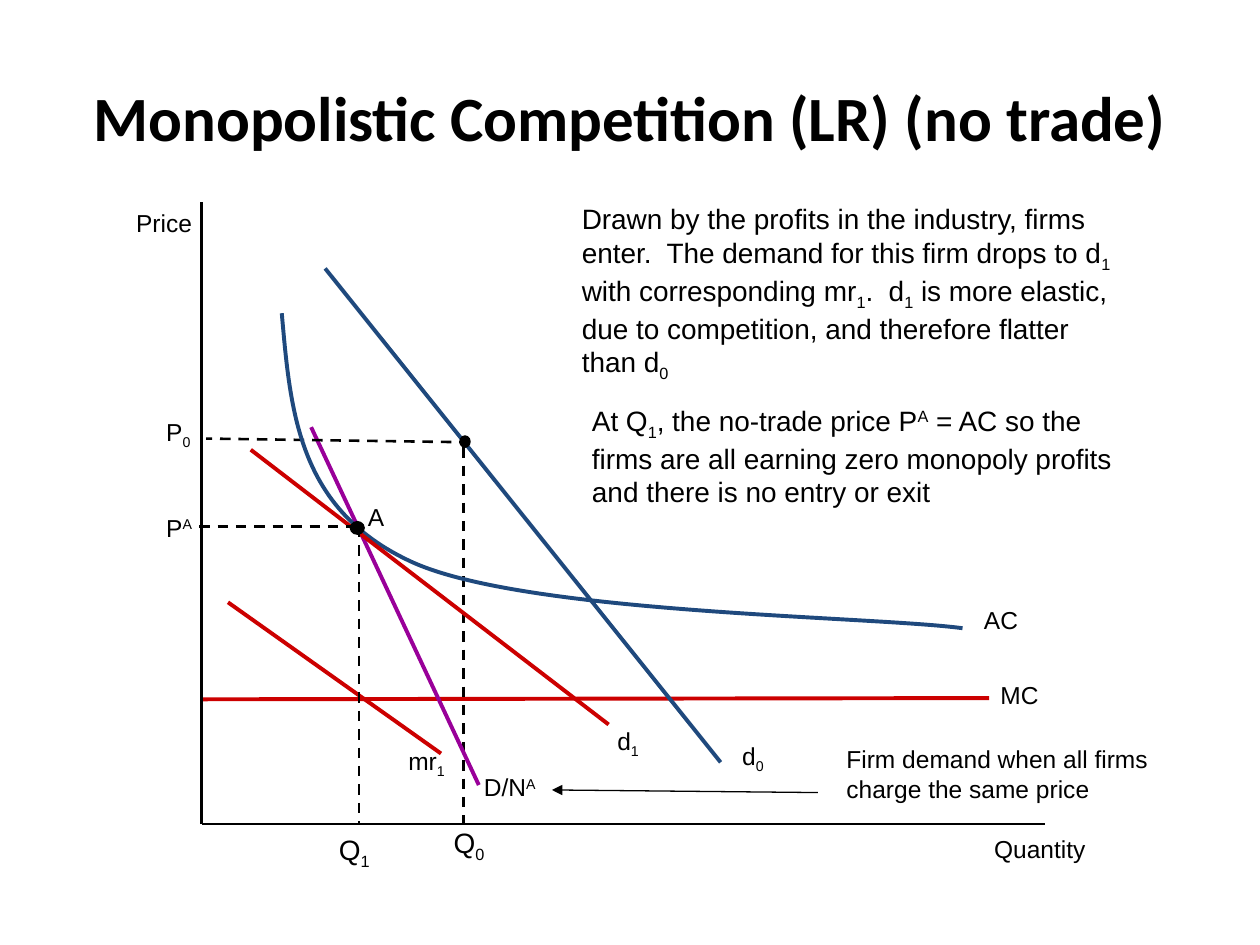
from pptx import Presentation
from pptx.dml.color import RGBColor
from pptx.enum.dml import MSO_LINE
from pptx.enum.shapes import MSO_CONNECTOR, MSO_SHAPE
from pptx.enum.text import MSO_ANCHOR, PP_ALIGN
from pptx.oxml.ns import qn
from pptx.util import Pt
from lxml.etree import SubElement

BLACK, WHITE = "000000", "FFFFFF"
RED, BLUE, PURPLE = "CC0000", "1F497D", "990099"
BASELINES = {"_": "-25000", "^": "30000"}
AXIS_X, AXIS_Y = 115.2, 470.9
Q0, Q1, PRICE_A = 265, 205.2, 301


def color(value):
    return RGBColor.from_string(value)


def write(box, text, size=14, font="Arial", bold=False, align=PP_ALIGN.LEFT,
          anchor=MSO_ANCHOR.TOP, inset=(0, 0)):
    frame = box.text_frame
    frame.word_wrap = True
    frame.vertical_anchor = anchor
    frame.margin_left = frame.margin_right = Pt(inset[0])
    frame.margin_top = frame.margin_bottom = Pt(inset[1])
    para = frame.paragraphs[0]
    para.alignment = align
    for part in text.split("|"):
        span = para.add_run()
        baseline = BASELINES.get(part[0])
        span.text = part[1:] if baseline else part
        span.font.size = Pt(size)
        span.font.name = font
        span.font.bold = bold
        span.font.color.rgb = color(BLACK)
        if baseline:
            span._r.get_or_add_rPr().set("baseline", baseline)


class Diagram:
    inset = (7.2, 3.6)

    def __init__(self, page):
        self.shapes = page.shapes

    def text(self, text, left, top, width, height, **style):
        box = self.shapes.add_textbox(Pt(left), Pt(top), Pt(width), Pt(height))
        write(box, text, **style)

    def shape(self, kind, left, top, width, height, fill, line):
        box = self.shapes.add_shape(kind, Pt(left), Pt(top), Pt(width), Pt(height))
        box.shadow.inherit = False
        box.fill.solid()
        box.fill.fore_color.rgb = color(fill)
        box.line.color.rgb = color(line)
        box.line.width = Pt(0.75)
        return box

    def label(self, text, left, top, width=22.3, height=21.6, **style):
        box = self.shape(MSO_SHAPE.RECTANGLE, left, top, width, height, WHITE, WHITE)
        write(box, text, **style)

    def dot(self, left, top, width, height):
        self.shape(MSO_SHAPE.OVAL, left, top, width, height, BLACK, BLACK)

    def line(self, start, end, stroke=BLACK, weight=1.5, dashed=False, arrow=False):
        line = self.shapes.add_connector(
            MSO_CONNECTOR.STRAIGHT, *(Pt(value) for value in start + end))
        line.line.color.rgb = color(stroke)
        line.line.width = Pt(weight)
        if dashed:
            line.line.dash_style = MSO_LINE.DASH
        if arrow:
            SubElement(line.line._get_or_add_ln(), qn("a:tailEnd"), type="triangle")
        SubElement(line._element.spPr, qn("a:effectLst"))

    def curve(self, points, stroke, weight=2.25):
        builder = self.shapes.build_freeform(*points[0], scale=Pt(1))
        builder.add_line_segments(points[1:], close=False)
        curve = builder.convert_to_shape()
        curve.shadow.inherit = False
        curve.fill.background()
        curve.line.color.rgb = color(stroke)
        curve.line.width = Pt(weight)
        outline = next(curve._element.iter(qn("a:path")))
        segments = outline.findall(qn("a:lnTo"))
        for first in range(0, len(segments), 3):
            bezier = SubElement(outline, qn("a:cubicBezTo"))
            for segment in segments[first:first + 3]:
                bezier.append(segment[0])
                outline.remove(segment)


def main():
    deck = Presentation()
    deck.slide_width, deck.slide_height = Pt(720), Pt(540)
    diagram = Diagram(deck.slides.add_slide(deck.slide_layouts[6]))

    diagram.text("Monopolistic Competition (LR) (no trade)", 36, 21.6, 648, 90,
                 size=36, font="Calibri", bold=True, align=PP_ALIGN.CENTER,
                 anchor=MSO_ANCHOR.MIDDLE, inset=diagram.inset)

    diagram.line((AXIS_X, 399.6), (565.2, 398.9), RED, 2.25)
    diagram.label("Price", 77.8, 118.8, 38.9, 20.2)
    diagram.label("Quantity", 568.1, 476.6, 55.4, 19.4)
    diagram.label("MC", 571.7, 388.8, 32.4, 22.3)
    diagram.label("AC", 562.3, 345.6, 25.9)

    diagram.line((Q0, 255.6), (Q0, AXIS_Y), dashed=True)
    diagram.line((177.8, 244.1), (273.6, 448.6), PURPLE, 2.25)
    diagram.line((185.8, 153.4), (411.8, 435.6), BLUE, 2.25)
    diagram.text("d|_0", 424.1, 423.4, 18.7, 21.6)
    diagram.text("D/N|^A", 276.5, 441.4, 41.8, 18)
    diagram.line((AXIS_X, 250.6), (265.7, 252.7), dashed=True)
    diagram.dot(262.8, 249.1, 5.8, 6.5)
    diagram.curve([(160.6, 179.3), (165.6, 235.4), (169.9, 290.9), (234.7, 321.1),
                   (299.5, 351.4), (497.5, 352.1), (550.1, 358.6)], BLUE)
    diagram.label("P|_0", 95, 238.3)
    diagram.label("Q|_0", 259.2, 471.6, size=16)
    diagram.line((AXIS_X, AXIS_Y), (596.9, AXIS_Y))

    diagram.line((143.3, 257), (347.8, 414), RED, 2.25)
    diagram.text("d|_1", 352.8, 414.7, 18.7, 21.6)
    diagram.line((130.3, 344.2), (252, 430.6), RED, 2.25)
    diagram.text("mr|_1", 233.3, 426.2, 29.5, 21.6)

    diagram.label("P|^A", 95, 293)
    diagram.line((113.8, PRICE_A), (Q1, PRICE_A), dashed=True)
    diagram.line((Q1, PRICE_A), (Q1, AXIS_Y), dashed=True)
    diagram.dot(200.2, 298.1, 7.9, 7.2)
    diagram.text("A", 210.2, 286.6, 18, 16.6)
    diagram.label("Q|_1", 193.7, 475.9, size=16)
    diagram.line((AXIS_X, AXIS_Y), (AXIS_X, 115.2))

    diagram.text("Firm demand when all firms charge the same price",
                 476.6, 421.9, 224.6, 41, inset=diagram.inset)
    diagram.line((467.3, 452.9), (315.4, 451.4), weight=0.75, arrow=True)
    diagram.text("At Q|_1|, the no-trade price P|^A| = AC so the firms are all earning "
                 "zero monopoly profits and there is no entry or exit",
                 331.2, 226.8, 319.7, 64.8, size=16, inset=diagram.inset)
    diagram.label("Drawn by the profits in the industry, firms enter.  The demand for this "
                  "firm drops to d|_1| with corresponding mr|_1|.  d|_1| is more elastic, "
                  "due to competition, and therefore flatter than d|_0",
                  325.4, 111.6, 319, 103.7, size=16, inset=diagram.inset)

    deck.save("out.pptx")


if __name__ == "__main__":
    main()
